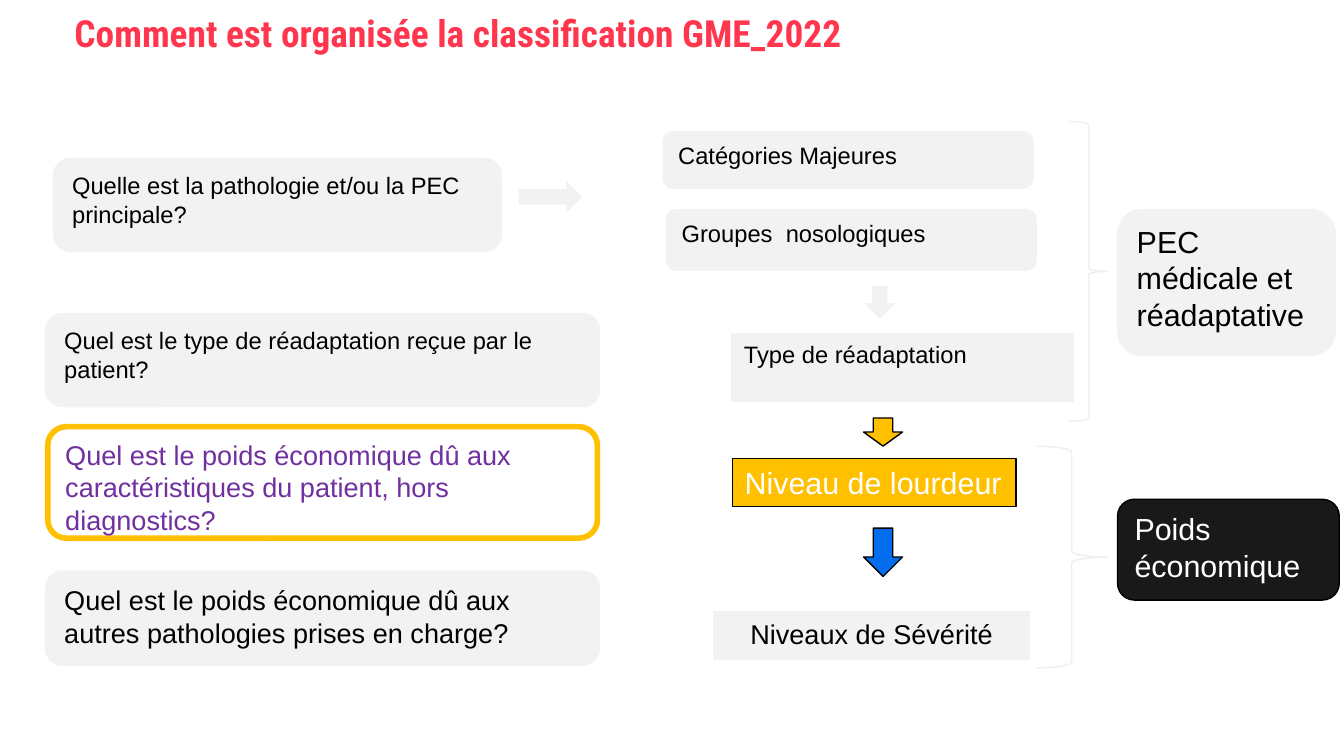
from dataclasses import dataclass

from pptx import Presentation
from pptx.dml.color import RGBColor
from pptx.enum import shapes, text
from pptx.util import Pt

PX = 4572
KIND = shapes.MSO_SHAPE


@dataclass(frozen=True)
class Theme:
    title_font: str = "Roboto Condensed"
    body_font: str = "Arial"
    title_size: float = 20
    small: float = 12.7
    medium: float = 14.5
    large: float = 16.3
    thin: float = 0.75
    thick: float = 3
    red: str = "FF364D"
    grey: str = "F2F2F2"
    brace: str = "ECF0F1"
    amber: str = "FFC000"
    blue: str = "036DED"
    purple: str = "7030A0"
    dark: str = "191919"
    black: str = "000000"
    white: str = "FFFFFF"


THEME = Theme()


def px(*lengths):
    return [length * PX for length in lengths]


def color(value):
    return RGBColor.from_string(value)


def format_runs(paragraph, font, size, ink, bold=False):
    for run in paragraph.runs:
        run.font.name = font
        run.font.size = Pt(size)
        run.font.bold = bold
        run.font.color.rgb = color(ink)


def add_title(slide, box, wording):
    frame = slide.shapes.add_textbox(*px(*box)).text_frame
    frame.word_wrap = True
    frame.text = wording
    paragraph = frame.paragraphs[0]
    paragraph.line_spacing = Pt(31.8)
    format_runs(paragraph, THEME.title_font, THEME.title_size, THEME.red, True)


def add_outline(slide, kind, box, fill, line, width=THEME.thin):
    shape = slide.shapes.add_shape(kind, *px(*box))
    shape.shadow.inherit = False
    if fill:
        shape.fill.solid()
        shape.fill.fore_color.rgb = color(fill)
    else:
        shape.fill.background()
    shape.line.color.rgb = color(line)
    shape.line.width = Pt(width)
    return shape


def add_label(slide, kind, box, wording, size, fill=THEME.grey, line=THEME.grey,
              width=THEME.thin, ink=THEME.black, align=text.PP_ALIGN.LEFT):
    shape = add_outline(slide, kind, box, fill, line, width)
    frame = shape.text_frame
    frame.word_wrap = True
    frame.vertical_anchor = text.MSO_ANCHOR.TOP
    frame.margin_left, frame.margin_right = px(18, 18)
    frame.margin_top, frame.margin_bottom = px(9, 9)
    frame.text = wording
    paragraph = frame.paragraphs[0]
    paragraph.alignment = align
    format_runs(paragraph, THEME.body_font, size, ink)


def add_questions(slide):
    grey, amber = (THEME.grey, THEME.grey, THEME.black), (None, THEME.amber, THEME.purple)
    questions = [
        ((83, 239, 660, 132), "Quelle est la pathologie et/ou la PEC principale?", THEME.small, grey),
        ((71, 470, 818, 132), "Quel est le type de réadaptation reçue par le patient?", THEME.small, grey),
        ((71, 635, 818, 166), "Quel est le poids économique dû aux caractéristiques du patient, hors diagnostics?",
         THEME.medium, amber),
        ((71, 853, 818, 134), "Quel est le poids économique dû aux autres pathologies prises en charge?",
         THEME.medium, grey),
    ]
    for box, wording, size, (fill, line, ink) in questions:
        add_label(slide, KIND.ROUNDED_RECTANGLE, box, wording, size, fill, line, THEME.thick, ink)


def add_levels(slide):
    rounded, square = KIND.ROUNDED_RECTANGLE, KIND.RECTANGLE
    add_label(slide, rounded, (987, 196, 550, 84), "Catégories Majeures", THEME.small)
    add_label(slide, rounded, (992, 312, 550, 90), "Groupes  nosologiques", THEME.small)
    add_label(slide, square, (1089, 497, 508, 100), "Type de réadaptation", THEME.small)
    add_label(slide, square, (1090, 682, 422, 72), "Niveau de lourdeur", THEME.large,
              THEME.amber, THEME.black, ink=THEME.white)
    add_label(slide, square, (1062, 910, 470, 72), "Niveaux de Sévérité", THEME.medium,
              align=text.PP_ALIGN.CENTER)


def add_arrows(slide):
    add_outline(slide, KIND.RIGHT_ARROW, (773, 272, 92, 42), THEME.grey, THEME.grey)
    turned = add_outline(slide, KIND.RIGHT_ARROW, (1286, 429, 46, 42), THEME.grey, THEME.grey)
    turned.rotation = 90
    add_outline(slide, KIND.DOWN_ARROW, (1285, 622, 58, 42), THEME.amber, THEME.black)
    add_outline(slide, KIND.DOWN_ARROW, (1285, 786, 58, 72), THEME.blue, THEME.black)


def add_groups(slide):
    for box in ((1591, 181, 58, 446), (1542, 664, 106, 330)):
        add_outline(slide, KIND.RIGHT_BRACE, box, None, THEME.brace)
    add_label(slide, KIND.ROUNDED_RECTANGLE, (1663, 312, 324, 217),
              "PEC  médicale et réadaptative", THEME.large)
    add_label(slide, KIND.ROUNDED_RECTANGLE, (1663, 743, 330, 150), "Poids économique",
              THEME.large, THEME.dark, THEME.black, ink=THEME.white)


def main():
    presentation = Presentation()
    presentation.slide_width, presentation.slide_height = px(2000, 1125)
    slide = presentation.slides.add_slide(presentation.slide_layouts[6])
    add_title(slide, (91, -16, 1922, 100), "Comment est organisée la classification GME_2022")
    add_questions(slide)
    add_levels(slide)
    add_arrows(slide)
    add_groups(slide)
    presentation.save("out.pptx")


if __name__ == "__main__":
    main()
